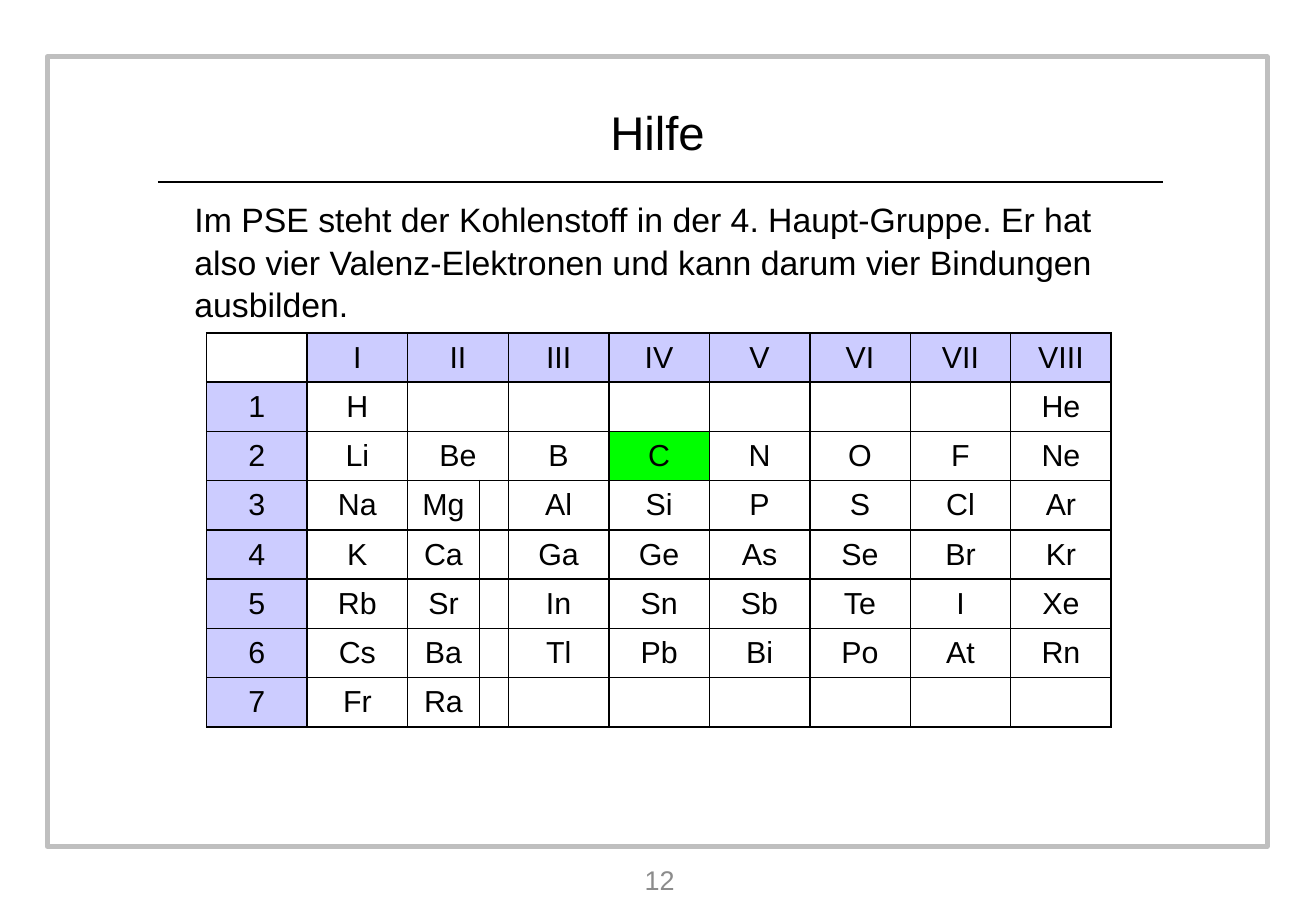
from dataclasses import dataclass
from typing import NamedTuple

from lxml.etree import SubElement
from pptx import Presentation
from pptx.dml.color import RGBColor as Rgb
from pptx.enum.shapes import MSO_CONNECTOR as Connector, MSO_SHAPE as Preset
from pptx.enum.text import MSO_ANCHOR as Anchor, MSO_AUTO_SIZE as AutoSize, PP_ALIGN as Align
from pptx.oxml.ns import qn
from pptx.slide import Slide
from pptx.table import _Cell as Cell
from pptx.text.text import TextFrame
from pptx.util import Cm, Pt


@dataclass(frozen=True)
class Theme:
    font: str = "Arial"
    ink: str = "000000"
    frame: str = "BFBFBF"
    number: str = "8C8C8C"
    header: str = "CCCCFF"
    highlight: str = "00FF00"
    title_size: int = 28
    body_size: int = 20
    cell_size: int = 18
    number_size: int = 16


class Area(NamedTuple):
    left: float
    top: float
    width: float
    height: float


class Period(NamedTuple):
    cells: str
    split_second: bool


THEME = Theme()
FRAME = Area(0.99, 1.19, 25.5, 16.51)
TITLE = Area(12.5, 2.01, 2.49, 1.5)
BODY = Area(3.81, 3.99, 19.99, 11.99)
NUMBER = Area(10.69, 17.91, 6.2, 0.99)
TABLE = Area(4.32, 6.96, 18.9, 8.24)
COLUMN_WIDTHS = [2.1, 2.1, 1.5, 0.6] + [2.1] * 6
HIGHLIGHTED = "C"
PERIODS = [
    Period(",I,II,,III,IV,V,VI,VII,VIII", False),
    Period("1,H,,,,,,,,He", False),
    Period("2,Li,Be,,B,C,N,O,F,Ne", False),
    Period("3,Na,Mg,,Al,Si,P,S,Cl,Ar", True),
    Period("4,K,Ca,,Ga,Ge,As,Se,Br,Kr", True),
    Period("5,Rb,Sr,,In,Sn,Sb,Te,I,Xe", True),
    Period("6,Cs,Ba,,Tl,Pb,Bi,Po,At,Rn", True),
    Period("7,Fr,Ra,,,,,,,", True),
]


def lengths(area: Area) -> list[Cm]:
    return [Cm(value) for value in area]


def place(shape, area: Area) -> None:
    shape.left, shape.top, shape.width, shape.height = lengths(area)


def write(frame: TextFrame, text: str, size: int, color: str, align: Align) -> None:
    frame.text = text
    para = frame.paragraphs[0]
    para.alignment = align
    for span in para.runs:
        span.font.name = THEME.font
        span.font.size = Pt(size)
        span.font.color.rgb = Rgb.from_string(color)


def draw_frame(page: Slide) -> None:
    box = page.shapes.add_shape(Preset.RECTANGLE, *lengths(FRAME))
    box.shadow.inherit = False
    box.fill.background()
    box.line.color.rgb = Rgb.from_string(THEME.frame)
    box.line.width = Pt(3)


def draw_rule(page: Slide) -> None:
    rule = page.shapes.add_connector(Connector.STRAIGHT, Cm(3.3), Cm(3.81), Cm(24.31), Cm(3.81))
    rule.line.color.rgb = Rgb.from_string(THEME.ink)
    rule.line.width = Pt(1.5)
    SubElement(rule.element.spPr, qn("a:effectLst"))


def fill_title(page: Slide) -> None:
    title = page.shapes.title
    place(title, TITLE)
    write(title.text_frame, "Hilfe", THEME.title_size, THEME.ink, Align.CENTER)
    title.text_frame.auto_size = AutoSize.NONE
    title.text_frame.word_wrap = False
    title.text_frame.vertical_anchor = Anchor.MIDDLE


def fill_body(page: Slide) -> None:
    body = page.placeholders[1]
    place(body, BODY)
    text = (
        "Im PSE steht der Kohlenstoff in der 4. Haupt-Gruppe. Er hat also vier "
        "Valenz-Elektronen und kann darum vier Bindungen ausbilden."
    )
    write(body.text_frame, text, THEME.body_size, THEME.ink, Align.LEFT)
    body.text_frame.auto_size = AutoSize.NONE
    para = body.text_frame.paragraphs[0]
    para.line_spacing = 1.05
    para.space_before = Pt(0)
    properties = para._p.get_or_add_pPr()
    properties.set("marL", "0")
    properties.set("indent", "0")
    SubElement(properties, qn("a:buNone"))


def draw_number(page: Slide) -> None:
    box = page.shapes.add_textbox(*lengths(NUMBER))
    box.text_frame.word_wrap = True
    box.text_frame.vertical_anchor = Anchor.MIDDLE
    write(box.text_frame, "12", THEME.number_size, THEME.number, Align.CENTER)


def add_borders(cell: Cell) -> None:
    properties = cell._tc.get_or_add_tcPr()
    for side in ("a:lnL", "a:lnR", "a:lnT", "a:lnB"):
        line = SubElement(properties, qn(side), w=str(Pt(1)))
        fill = SubElement(line, qn("a:solidFill"))
        SubElement(fill, qn("a:srgbClr"), val=THEME.ink)


def format_cell(cell: Cell, text: str, is_header: bool) -> None:
    write(cell.text_frame, text, THEME.cell_size, THEME.ink, Align.CENTER)
    cell.vertical_anchor = Anchor.MIDDLE
    add_borders(cell)
    if is_header or text == HIGHLIGHTED:
        cell.fill.solid()
        cell.fill.fore_color.rgb = Rgb.from_string(THEME.header if is_header else THEME.highlight)
    else:
        cell.fill.background()


def draw_table(page: Slide) -> None:
    shape = page.shapes.add_table(len(PERIODS), len(COLUMN_WIDTHS), *lengths(TABLE))
    table = shape.table
    table.first_row = False
    table.horz_banding = False
    for column, width in zip(table.columns, COLUMN_WIDTHS):
        column.width = Cm(width)
    for row, period in enumerate(PERIODS):
        table.rows[row].height = Cm(TABLE.height / len(PERIODS))
        if not period.split_second:
            table.cell(row, 2).merge(table.cell(row, 3))
        for column, text in enumerate(period.cells.split(",")):
            is_header = (row == 0) != (column == 0)
            format_cell(table.cell(row, column), text, is_header)


def main() -> None:
    deck = Presentation()
    deck.slide_width, deck.slide_height = Cm(27.51), Cm(19.05)
    page = deck.slides.add_slide(deck.slide_layouts[1])
    draw_frame(page)
    draw_rule(page)
    fill_title(page)
    fill_body(page)
    draw_number(page)
    draw_table(page)
    deck.save("out.pptx")


if __name__ == "__main__":
    main()
